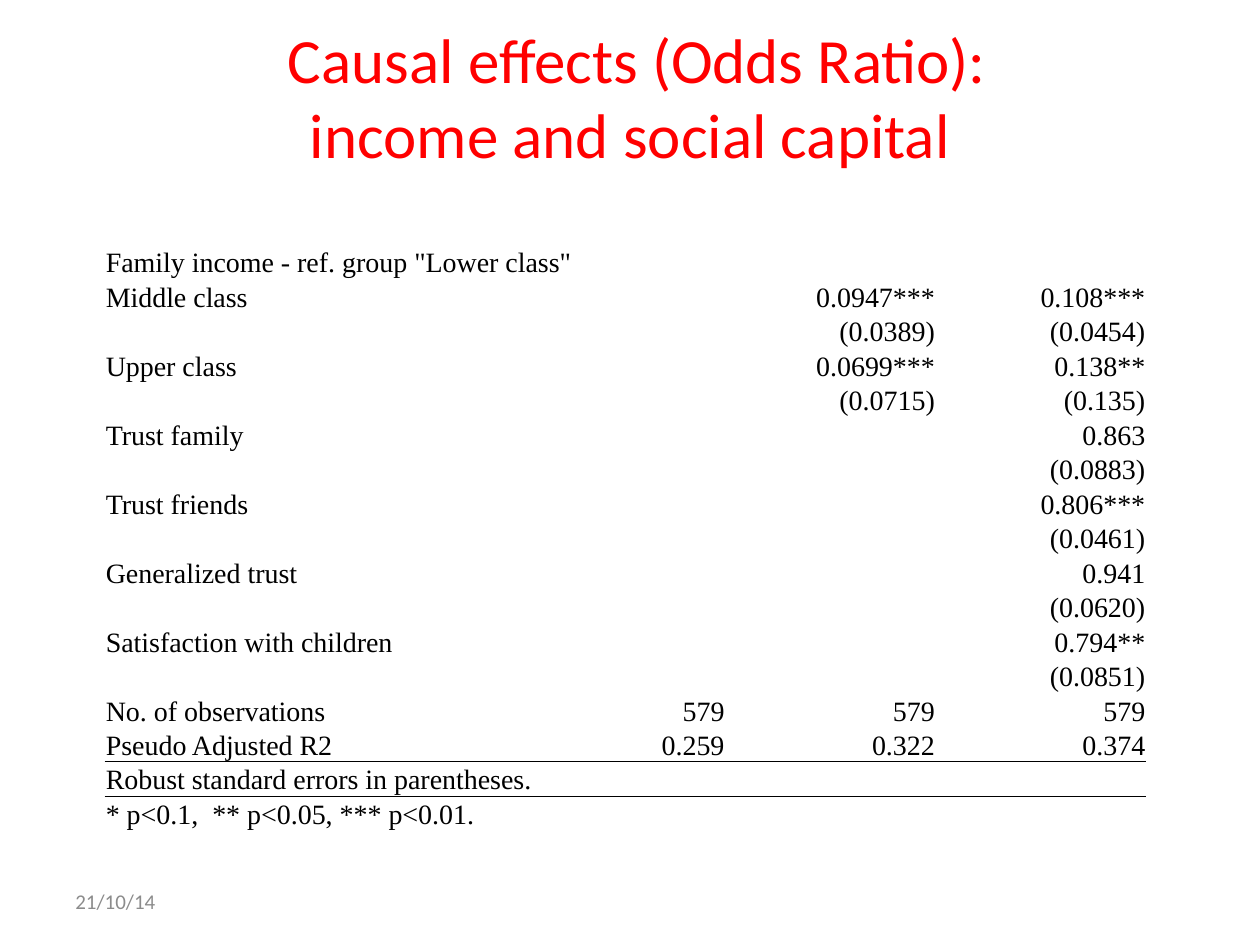
"""Build a slide with a regression table of income and social capital effects."""
from lxml import etree
from pptx import Presentation
from pptx.dml.color import RGBColor
from pptx.enum import text
from pptx.oxml import ns
from pptx.util import Inches, Pt

RED = RGBColor(0xFF, 0x00, 0x00)
BLACK = RGBColor(0x00, 0x00, 0x00)
GRAY = RGBColor(0x8C, 0x8C, 0x8C)

ROWS = [
    ('Family income - ref. group "Lower class"', "", "", ""),
    ("Middle class", "", "0.0947***", "0.108***"),
    ("", "", "(0.0389)", "(0.0454)"),
    ("Upper class", "", "0.0699***", "0.138**"),
    ("", "", "(0.0715)", "(0.135)"),
    ("Trust family", "", "", "0.863"),
    ("", "", "", "(0.0883)"),
    ("Trust friends", "", "", "0.806***"),
    ("", "", "", "(0.0461)"),
    ("Generalized trust", "", "", "0.941"),
    ("", "", "", "(0.0620)"),
    ("Satisfaction with children", "", "", "0.794**"),
    ("", "", "", "(0.0851)"),
    ("No. of observations", "579", "579", "579"),
    ("Pseudo Adjusted R2", "0.259", "0.322", "0.374"),
    ("Robust standard errors in parentheses.", "", "", ""),
    ("* p<0.1,  ** p<0.05, *** p<0.01.", "", "", ""),
]
COLUMN_WIDTHS = [3.26, 1.67, 1.67, 1.67]
ROW_HEIGHT = 0.25
RULED_EDGES = {14: "a:lnB", 15: "a:lnT"}
LAST_MERGED_COLUMN = {0: 2, 15: 1, 16: 1}
NO_STYLE_NO_GRID = "{2D5ABB26-0587-4C30-8999-92F81FD0307C}"


def set_font(paragraph, name, size, color):
    paragraph.font.name = name
    paragraph.font.size = Pt(size)
    paragraph.font.color.rgb = color


def add_rule(cell, edge):
    line = etree.Element(ns.qn(edge), w=str(Pt(0.5)))
    fill = etree.SubElement(line, ns.qn("a:solidFill"))
    etree.SubElement(fill, ns.qn("a:srgbClr"), val=str(BLACK))
    cell._tc.get_or_add_tcPr().insert(0, line)


deck = Presentation()
deck.slide_width, deck.slide_height = Inches(10), Inches(7.5)
page = deck.slides.add_slide(deck.slide_layouts[5])

title = page.shapes.title
title.left, title.top = Inches(0.5), Inches(0.21)
title.width, title.height = Inches(9), Inches(1.1)
title.text_frame.text = " Causal effects (Odds Ratio):\vincome and social capital"
title.text_frame.vertical_anchor = text.MSO_ANCHOR.MIDDLE
heading = title.text_frame.paragraphs[0]
heading.alignment = text.PP_ALIGN.CENTER
set_font(heading, "Calibri", 36, RED)

date_box = page.shapes.add_textbox(Inches(0.5), Inches(6.95), Inches(2.33), Inches(0.4))
date_box.text_frame.word_wrap = True
date_box.text_frame.vertical_anchor = text.MSO_ANCHOR.MIDDLE
date_box.text_frame.text = "21/10/14"
set_font(date_box.text_frame.paragraphs[0], "Calibri", 12, GRAY)

table = page.shapes.add_table(
    len(ROWS), len(COLUMN_WIDTHS), Inches(0.83), Inches(1.94),
    Inches(sum(COLUMN_WIDTHS)), Inches(ROW_HEIGHT * len(ROWS))).table
table.first_row = False
table.horz_banding = False
table._tbl.tblPr.find(ns.qn("a:tableStyleId")).text = NO_STYLE_NO_GRID
for column, width in zip(table.columns, COLUMN_WIDTHS):
    column.width = Inches(width)

for row_index, values in enumerate(ROWS):
    table.rows[row_index].height = Inches(ROW_HEIGHT)
    for column_index, value in enumerate(values):
        cell = table.cell(row_index, column_index)
        cell.fill.background()
        cell.vertical_anchor = text.MSO_ANCHOR.BOTTOM
        cell.margin_left = cell.margin_right = Inches(0.01)
        cell.margin_top = Pt(0.5)
        cell.margin_bottom = 0
        cell.text = value
        para = cell.text_frame.paragraphs[0]
        para.alignment = text.PP_ALIGN.RIGHT if column_index else text.PP_ALIGN.LEFT
        set_font(para, "Times New Roman", 16, BLACK)
        if row_index in RULED_EDGES:
            add_rule(cell, RULED_EDGES[row_index])

for row_index, last_column in LAST_MERGED_COLUMN.items():
    table.cell(row_index, 0).merge(table.cell(row_index, last_column))

deck.save("out.pptx")
